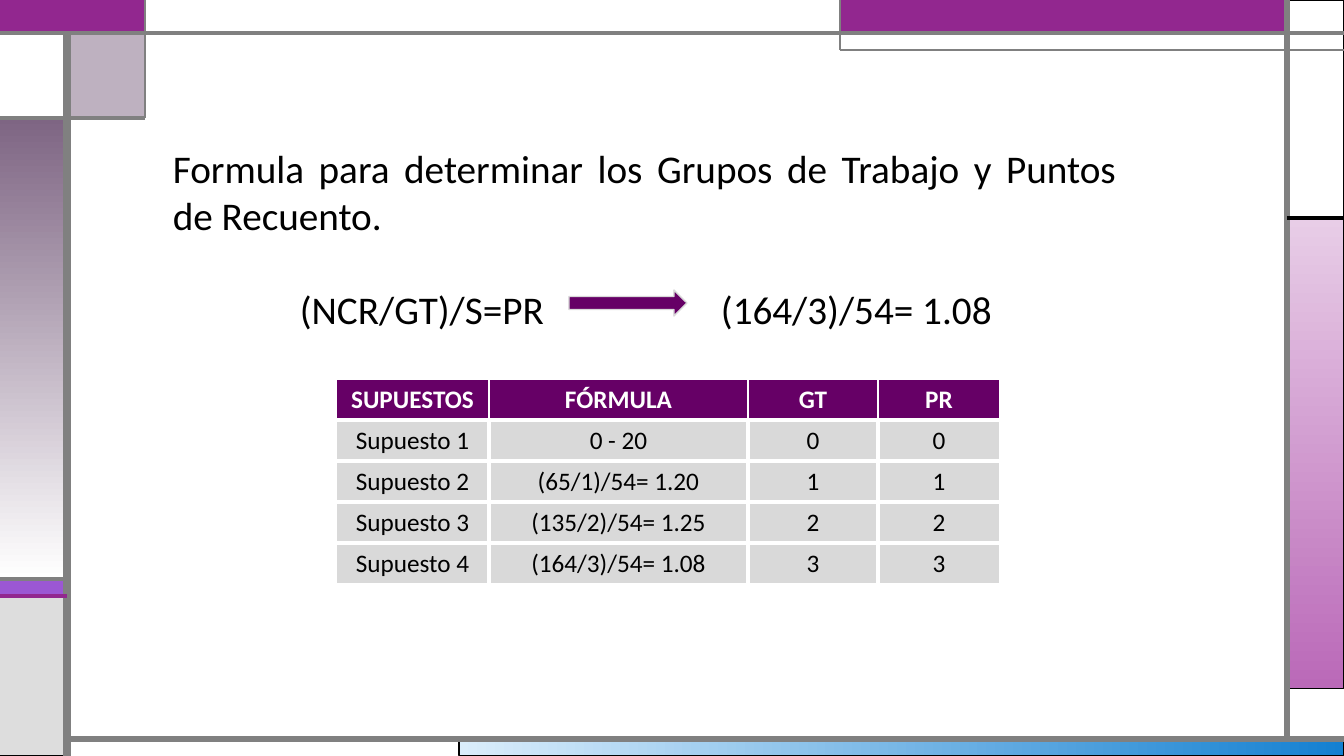
from dataclasses import dataclass

import lxml.etree
import pptx
import pptx.dml.color
import pptx.enum.shapes
import pptx.enum.text
import pptx.oxml.ns
import pptx.util

PX = 12192000 / 1344  # EMU per px
WIDTH, HEIGHT = 1344, 756
GREY, PURPLE, PLUM, WHITE, BLACK = "808080", "92278F", "660066", "FFFFFF", "000000"
ALIGN = pptx.enum.text.PP_ALIGN
SHAPE = pptx.enum.shapes.MSO_SHAPE


@dataclass
class Panel:
    left: int
    top: int
    right: int
    bottom: int
    colors: tuple[str, ...]  # two colours make a gradient
    line: str = BLACK
    line_pt: float = 0.75
    angle: int = 0
    alpha: int = 100
    shape: int = SHAPE.RECTANGLE


@dataclass
class Rule:
    x1: int
    y1: int
    x2: int
    y2: int
    width_pt: float
    color: str = GREY


# Edges shared by the frame's panels and rules
LEFT, CORNER, MIDDLE, RIGHT = 67, 145, 840, 1287
TOP, CORNER_END, SIDE_TOP, BAND, BAND_END, BOTTOM = 33, 118, 218, 579, 596, 739

PANELS = [
    Panel(459, BOTTOM, WIDTH, HEIGHT, ("DAEDFB", "1480D1")),
    Panel(RIGHT, SIDE_TOP, WIDTH, 689, ("E8CDE7", "BA69B8"), angle=270),
    Panel(0, BAND, LEFT, BAND_END, ("9B57D3",)),
    Panel(0, BAND_END, LEFT, HEIGHT, ("DDDDDD",)),
    Panel(RIGHT, 0, WIDTH, SIDE_TOP, (WHITE,)),
    Panel(MIDDLE, 0, RIGHT, TOP, (PURPLE,), line="755DD9"),
    Panel(LEFT, TOP, CORNER, CORNER_END, ("7E6583",), alpha=50),
    Panel(0, CORNER_END, LEFT, BAND, ("7E6583", WHITE), angle=270),
    Panel(0, TOP, LEFT, CORNER_END, (WHITE,)),
    Panel(0, 0, CORNER, TOP, (PURPLE,), line=PURPLE, line_pt=1.5),
    Panel(CORNER, 0, MIDDLE, TOP, (WHITE,), line=GREY),
]
RULES = [
    Rule(LEFT, HEIGHT, LEFT, TOP, 6),
    Rule(LEFT, BOTTOM, WIDTH, BOTTOM, 4.5),
    Rule(RIGHT, BOTTOM, RIGHT, 0, 4.5),
    Rule(0, TOP, WIDTH, TOP, 3),
    Rule(WIDTH, 50, MIDDLE, 50, 1.5),
    Rule(MIDDLE, 50, MIDDLE, 0, 1.5),
    Rule(RIGHT, SIDE_TOP, WIDTH, SIDE_TOP, 2.25, BLACK),
    Rule(CORNER, 0, CORNER, CORNER_END, 1.5),
    Rule(CORNER, CORNER_END, 0, CORNER_END, 2.25),
    Rule(LEFT, BAND, 0, BAND, 2.25),
    Rule(LEFT, BAND_END, 0, BAND_END, 2.25, PURPLE),
]
FORMULA_ARROW = Panel(569, 290, 687, 316, (PLUM,), "D9D9D9", 1, shape=SHAPE.RIGHT_ARROW)

COLUMN_WIDTHS = [153, 259, 130, 122]
ROW_HEIGHT = 41
SUPUESTOS = [
    ("SUPUESTOS", "FÓRMULA", "GT", "PR"),
    ("Supuesto 1", "0 - 20", "0", "0"),
    ("Supuesto 2", "(65/1)/54= 1.20", "1", "1"),
    ("Supuesto 3", "(135/2)/54= 1.25", "2", "2"),
    ("Supuesto 4", "(164/3)/54= 1.08", "3", "3"),
]

BODY_FONT = {"name": "Calibri", "size": pptx.util.Pt(28)}
CELL_FONT = {"name": "Calibri", "size": pptx.util.Pt(18), "bold": False}
HEADER_FONT = CELL_FONT | {"bold": True}


def px(*lengths: int) -> list[int]:
    return [round(length * PX) for length in lengths]


def rgb(color: str) -> pptx.dml.color.RGBColor:
    return pptx.dml.color.RGBColor.from_string(color)


def add_xml(parent, tag: str, **attributes: str):
    return lxml.etree.SubElement(parent, pptx.oxml.ns.qn(tag), attributes)


def style_font(font, values: dict, color: str) -> None:
    for key, value in values.items():
        setattr(font, key, value)
    font.color.rgb = rgb(color)


def draw_panel(slide, panel: Panel) -> None:
    box = px(panel.left, panel.top, panel.right - panel.left, panel.bottom - panel.top)
    shape = slide.shapes.add_shape(panel.shape, *box)
    shape.shadow.inherit = False
    if len(panel.colors) == 2:
        shape.fill.gradient()
        shape.fill.gradient_angle = panel.angle
        for stop, color in zip(shape.fill.gradient_stops, panel.colors):
            stop.color.rgb = rgb(color)
    else:
        shape.fill.solid()
        shape.fill.fore_color.rgb = rgb(panel.colors[0])
    if panel.alpha < 100:
        solid = shape.element.spPr.find(pptx.oxml.ns.qn("a:solidFill"))
        add_xml(solid[0], "a:alpha", val=str(panel.alpha * 1000))
    shape.line.color.rgb = rgb(panel.line)
    shape.line.width = pptx.util.Pt(panel.line_pt)


def draw_rule(slide, rule: Rule) -> None:
    ends = px(rule.x1, rule.y1, rule.x2, rule.y2)
    line = slide.shapes.add_connector(pptx.enum.shapes.MSO_CONNECTOR.STRAIGHT, *ends)
    line.line.color.rgb = rgb(rule.color)
    line.line.width = pptx.util.Pt(rule.width_pt)
    add_xml(line.element.spPr, "a:effectLst")


def draw_text(slide) -> None:
    frame = slide.shapes.add_textbox(*px(163, 139, 963, 485)).text_frame
    frame.word_wrap = True
    heading = frame.paragraphs[0]
    heading.alignment = ALIGN.JUSTIFY
    heading.text = "Formula para determinar los Grupos de Trabajo y Puntos de Recuento."

    # Both formulas stand on tab stops, on either side of the arrow
    formulas = frame.add_paragraph()
    formulas.alignment = ALIGN.LEFT
    formulas.space_before = pptx.util.Pt(34)
    formulas.text = "\t(NCR/GT)/S=PR\t(164/3)/54= 1.08"
    tabs = add_xml(formulas._p.get_or_add_pPr(), "a:tabLst")
    for position in px(127, 548):
        add_xml(tabs, "a:tab", pos=str(position), algn="l")
    for paragraph in frame.paragraphs:
        style_font(paragraph.font, BODY_FONT, BLACK)


def draw_cell(cell, text: str, header: bool, borders: dict[str, int]) -> None:
    properties = cell._tc.get_or_add_tcPr()
    for tag, width_pt in borders.items():
        border = add_xml(properties, tag, w=str(pptx.util.Pt(width_pt)))
        add_xml(add_xml(border, "a:solidFill"), "a:srgbClr", val=WHITE)
    cell.fill.solid()
    cell.fill.fore_color.rgb = rgb(PLUM if header else "D9D9D9")
    paragraph = cell.text_frame.paragraphs[0]
    paragraph.text = text
    paragraph.alignment = ALIGN.CENTER
    style_font(paragraph.font, HEADER_FONT if header else CELL_FONT, WHITE if header else BLACK)


def draw_table(slide) -> None:
    rows, columns = len(SUPUESTOS), len(COLUMN_WIDTHS)
    box = px(336, 379, sum(COLUMN_WIDTHS), rows * ROW_HEIGHT)
    table = slide.shapes.add_table(rows, columns, *box).table
    for column, width in zip(table.columns, px(*COLUMN_WIDTHS)):
        column.width = width
    for r, texts in enumerate(SUPUESTOS):
        for c, text in enumerate(texts):
            # Inner edges are thick, outer edges and the header's sides thin
            borders = {
                "a:lnL": 3 if r and c else 1,
                "a:lnR": 3 if r and c < columns - 1 else 1,
                "a:lnT": 3 if r else 1,
                "a:lnB": 3 if r < rows - 1 else 1,
            }
            draw_cell(table.cell(r, c), text, r == 0, borders)


def main() -> None:
    deck = pptx.Presentation()
    deck.slide_width, deck.slide_height = px(WIDTH, HEIGHT)
    slide = deck.slides.add_slide(deck.slide_layouts[6])
    # Frame
    for panel in PANELS:
        draw_panel(slide, panel)
    for rule in RULES:
        draw_rule(slide, rule)
    # Content
    draw_text(slide)
    draw_panel(slide, FORMULA_ARROW)
    draw_table(slide)
    deck.save("out.pptx")


if __name__ == "__main__":
    main()
